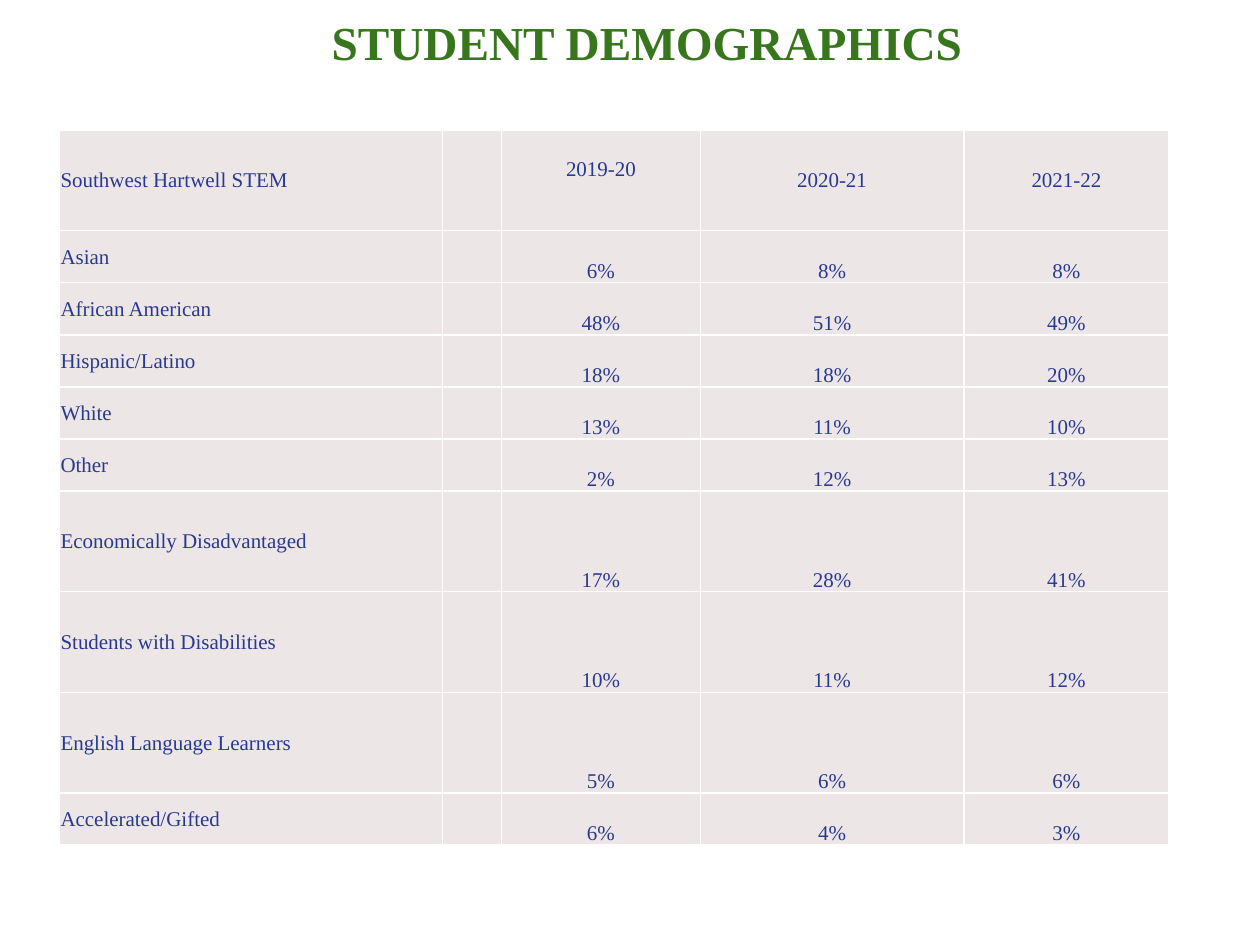
from lxml import etree
from pptx import Presentation
from pptx.dml.color import RGBColor
from pptx.enum import text
from pptx.oxml import ns
from pptx.util import Cm, Pt

GREEN = RGBColor(0x38, 0x76, 0x1D)
NAVY = RGBColor(0x2A, 0x39, 0x90)
CELL_GREY = RGBColor(0xEC, 0xE6, 0xE7)
WHITE = RGBColor(0xFF, 0xFF, 0xFF)
FONT = "Times New Roman"

COL_WIDTHS = [7.72, 1.19, 4.01, 5.31, 4.14]
TALL, SHORT = 2.03, 1.05
ROWS = [
    (TALL, "Southwest Hartwell STEM", "2019-20", "2020-21", "2021-22"),
    (SHORT, "Asian", "6%", "8%", "8%"),
    (SHORT, "African American", "48%", "51%", "49%"),
    (SHORT, "Hispanic/Latino", "18%", "18%", "20%"),
    (SHORT, "White", "13%", "11%", "10%"),
    (SHORT, "Other", "2%", "12%", "13%"),
    (TALL, "Economically Disadvantaged", "17%", "28%", "41%"),
    (TALL, "Students with Disabilities", "10%", "11%", "12%"),
    (TALL, "English Language Learners", "5%", "6%", "6%"),
    (SHORT, "Accelerated/Gifted", "6%", "4%", "3%"),
]


def write(tf, words, size=12, color=NAVY, bold=False, align=text.PP_ALIGN.CENTER):
    p = tf.paragraphs[0]
    p.alignment = align
    r = p.add_run()
    r.text = words
    r.font.name, r.font.size, r.font.bold = FONT, Pt(size), bold
    r.font.color.rgb = color


def add_borders(cell, color=WHITE, width=1):
    tc_pr = cell._tc.get_or_add_tcPr()
    for side in ("a:lnL", "a:lnR", "a:lnT", "a:lnB"):
        ln = etree.SubElement(tc_pr, ns.qn(side), w=str(Pt(width)))
        fill = etree.SubElement(ln, ns.qn("a:solidFill"))
        etree.SubElement(fill, ns.qn("a:srgbClr"), val=str(color))


def format_cell(cell, anchor):
    add_borders(cell)
    cell.fill.solid()
    cell.fill.fore_color.rgb = CELL_GREY
    cell.margin_left = cell.margin_right = cell.margin_top = Cm(0.02)
    cell.margin_bottom = 0
    cell.vertical_anchor = anchor


def add_title(s, left, top, width, height):
    sp = s.shapes.title
    sp.left, sp.top, sp.width, sp.height = left, top, width, height
    sp.text_frame.vertical_anchor = text.MSO_ANCHOR.MIDDLE
    write(sp.text_frame, "STUDENT DEMOGRAPHICS", size=27, color=GREEN, bold=True)


def add_demographics(s, left, top):
    """Place the table: a label column, a narrow gap column and three years."""
    width, height = Cm(sum(COL_WIDTHS)), Cm(sum(row[0] for row in ROWS))
    table = s.shapes.add_table(len(ROWS), len(COL_WIDTHS), left, top, width, height).table
    for col, col_width in zip(table.columns, COL_WIDTHS):
        col.width = Cm(col_width)
    for i, (row_height, label, *values) in enumerate(ROWS):
        table.rows[i].height = Cm(row_height)
        for j, words in enumerate([label, "", *values]):
            cell = table.cell(i, j)
            is_value = i > 0 and j > 1
            format_cell(cell, text.MSO_ANCHOR.BOTTOM if is_value else text.MSO_ANCHOR.MIDDLE)
            if words:
                align = text.PP_ALIGN.CENTER if j else text.PP_ALIGN.LEFT
                write(cell.text_frame, words, align=align)
    # The first year sits a little higher than the other headings
    table.cell(0, 2).margin_bottom = Cm(0.44)


def main():
    prs = Presentation()
    prs.slide_width, prs.slide_height = Cm(25.4), Cm(19.05)
    s = prs.slides.add_slide(prs.slide_layouts.get_by_name("Title Only"))
    add_title(s, Cm(3.02), Cm(0.23), Cm(20.04), Cm(1.22))
    add_demographics(s, Cm(1.2), Cm(2.62))
    prs.save("out.pptx")


if __name__ == "__main__":
    main()
